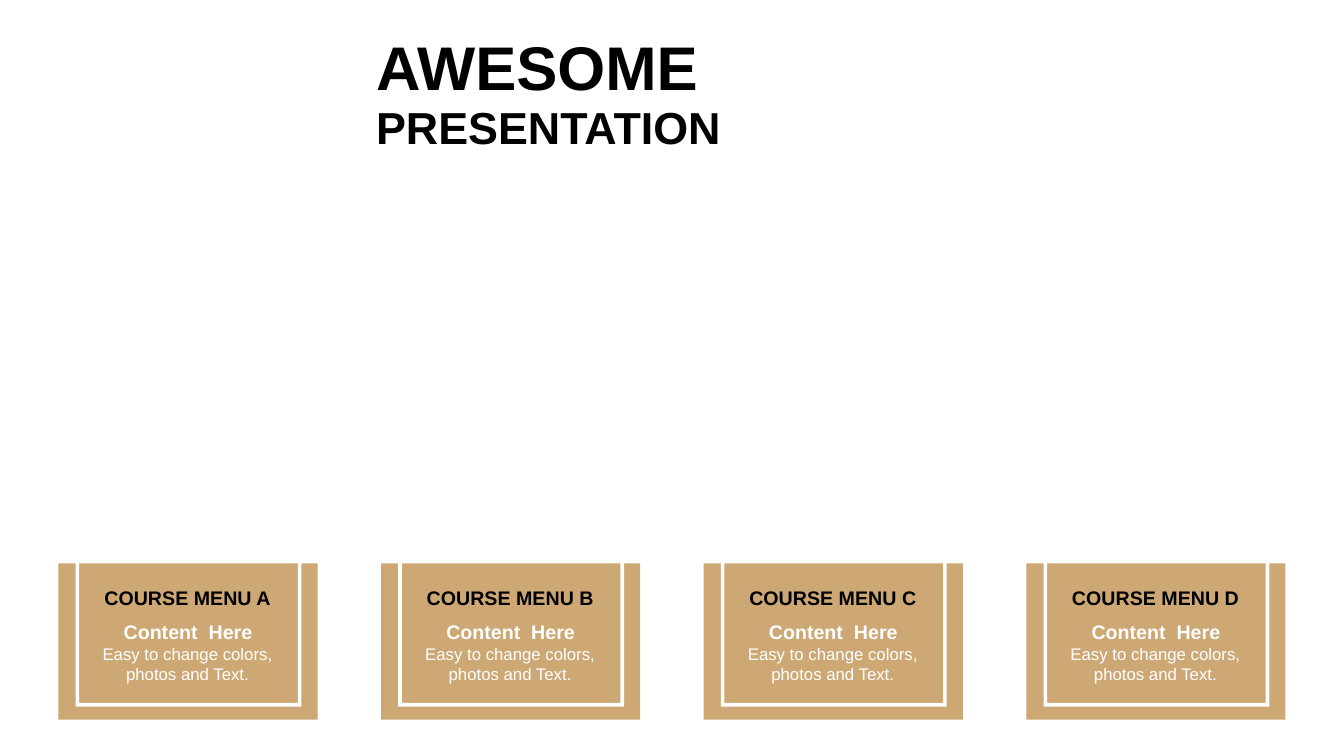
from pptx import Presentation, util as u
from pptx.dml import color
from pptx.enum import shapes, text

WIDTH, HEIGHT = 13.33, 7.5
CARD_LEFT, CARD_TOP, CARD_WIDTH, CARD_HEIGHT = 0.58, 5.59, 2.57, 1.55
CARD_PITCH = 3.2
TAN, WHITE, BLACK = "CDA874", "FFFFFF", "000000"
COURSES = "ABCD"
FORMATS = {
    "title": {"size": u.Pt(44), "bold": True},
    "subtitle": {"size": u.Pt(32), "bold": True},
    "heading": {"size": u.Pt(14), "bold": True},
    "description": {"size": u.Pt(12), "bold": False},
}


def rgb(value):
    """Turn a hex string into a colour."""
    return color.RGBColor.from_string(value)


def inches(box):
    """Convert a box of left, top, width and height to lengths."""
    return [u.Inches(length) for length in box]


def write(shape, words, style, ink, align, anchor=text.MSO_ANCHOR.MIDDLE):
    """Fill a shape with one formatted paragraph."""
    frame = shape.text_frame
    frame.text = words
    settings = {"word_wrap": True, "vertical_anchor": anchor,
                "auto_size": text.MSO_AUTO_SIZE.SHAPE_TO_FIT_TEXT}
    for name, value in settings.items():
        setattr(frame, name, value)
    paragraph = frame.paragraphs[0]
    paragraph.alignment = align
    paragraph.space_before = u.Pt(0)
    font = paragraph.runs[0].font
    for name, value in {"name": "Arial", **FORMATS[style]}.items():
        setattr(font, name, value)
    font.color.rgb = rgb(ink)


def add_block(slide, kind, box, fill):
    """Draw a plain filled shape without outline or shadow."""
    shape = slide.shapes.add_shape(kind, *inches(box))
    shape.shadow.inherit = False
    shape.fill.solid()
    shape.fill.fore_color.rgb = rgb(fill)
    shape.line.fill.background()
    return shape


def add_header(slide, box):
    """Place the title and subtitle placeholders in the header box."""
    left, top, width, height = box
    rows = [
        ("AWESOME", "title", 0, 0.84),
        ("PRESENTATION", "subtitle", 0.71, 0.64),
    ]
    for placeholder, row in zip(slide.placeholders, rows):
        words, style, offset, row_height = row
        area = inches((left, top + offset, width, row_height))
        for name, value in zip(("left", "top", "width", "height"), area):
            setattr(placeholder, name, value)
        write(placeholder, words, style, BLACK, text.PP_ALIGN.JUSTIFY)


def add_card(slide, box, course):
    """Place a course card with its tall frame and three texts."""
    left, top, width, height = box
    add_block(slide, shapes.MSO_SHAPE.RECTANGLE, box, TAN)
    frame_box = (left + 0.17, top - 3.5, width - 0.33, height + 3.37)
    frame = add_block(slide, shapes.MSO_SHAPE.FRAME, frame_box, WHITE)
    frame.adjustments[0] = 0.016
    middle, upper = text.MSO_ANCHOR.MIDDLE, text.MSO_ANCHOR.TOP
    rows = [
        (f"COURSE MENU {course}", "heading", BLACK, 0.24, 0.17, 2.08, 0.34, middle),
        ("Content  Here", "heading", WHITE, 0.21, 0.51, 2.15, 0.34, middle),
        ("Easy to change colors, photos and Text.", "description", WHITE,
         0.21, 0.75, 2.14, 0.5, upper),
    ]
    for words, style, ink, across, down, row_width, row_height, anchor in rows:
        area = (left + across, top + down, row_width, row_height)
        textbox = slide.shapes.add_textbox(*inches(area))
        write(textbox, words, style, ink, text.PP_ALIGN.CENTER, anchor)


def main():
    """Build and save the course menu slide."""
    presentation = Presentation()
    presentation.slide_width = u.Inches(WIDTH)
    presentation.slide_height = u.Inches(HEIGHT)
    slide = presentation.slides.add_slide(presentation.slide_layouts[0])
    add_header(slide, (3.63, 0.23, 6.08, 1.35))
    for column, course in enumerate(COURSES):
        left = CARD_LEFT + column * CARD_PITCH
        add_card(slide, (left, CARD_TOP, CARD_WIDTH, CARD_HEIGHT), course)
    presentation.save("out.pptx")


if __name__ == "__main__":
    main()
